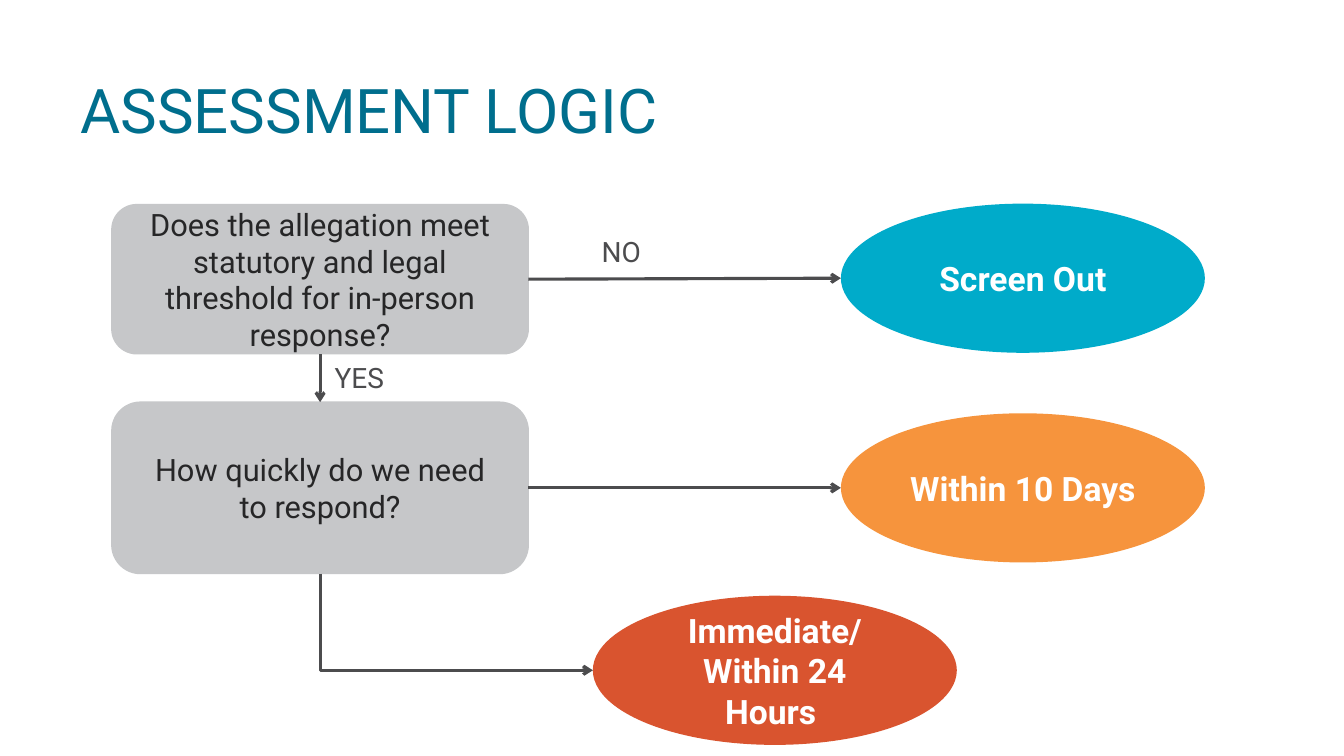
from pptx import Presentation
from pptx.dml.color import RGBColor
from pptx.enum.shapes import MSO_CONNECTOR, MSO_SHAPE
from pptx.enum.text import MSO_ANCHOR, PP_ALIGN
from pptx.oxml.ns import qn
from pptx.util import Inches, Pt
from lxml import etree

STRAIGHT, ELBOW = MSO_CONNECTOR.STRAIGHT, MSO_CONNECTOR.ELBOW
ROUNDED, OVAL = MSO_SHAPE.ROUNDED_RECTANGLE, MSO_SHAPE.OVAL
MIDDLE, TOP = MSO_ANCHOR.MIDDLE, MSO_ANCHOR.TOP
CENTER, LEFT = PP_ALIGN.CENTER, PP_ALIGN.LEFT
BOTTOM_SITE, RIGHT_SITE = 2, 3

TEAL = RGBColor(0x00, 0x6E, 0x8D)
GREY = RGBColor(0xC6, 0xC7, 0xC9)
INK = RGBColor(0x26, 0x26, 0x27)
SLATE = RGBColor(0x4C, 0x4C, 0x4E)
CYAN = RGBColor(0x00, 0xAB, 0xCA)
ORANGE = RGBColor(0xF6, 0x94, 0x3D)
RED = RGBColor(0xD9, 0x54, 0x2F)
WHITE = RGBColor(0xFF, 0xFF, 0xFF)

TITLE = "ASSESSMENT LOGIC"
QUESTION_X, QUESTION_W = 1.11, 4.13
OUTCOME_W, OUTCOME_H = 3.61, 1.48
QUESTIONS = {
    "threshold": (["Does the allegation meet statutory and legal threshold "
                   "for in-person response?"], 2.03, 1.48),
    "urgency": (["How quickly do we need\nto respond?"], 3.99, 1.7),
}
OUTCOMES = {
    "screen out": (["Screen Out"], 8.34, 2.02, CYAN),
    "ten days": (["Within 10 Days"], 8.34, 4.1, ORANGE),
    "immediate": (["Immediate/", "Within 24 Hours "], 5.88, 5.91, RED),
}
ANSWERS = [("NO", 5.87, 2.28, 1.04), ("YES", 3.22, 3.53, 1.31)]
ACROSS = [("threshold", "screen out"), ("urgency", "ten days")]

TITLE_FONT = {"name": "Roboto", "size": Pt(44), "bold": False}
QUESTION_FONT = {"name": "Roboto", "size": Pt(22)}
OUTCOME_FONT = {"name": "Roboto", "size": Pt(24), "bold": True}
ANSWER_FONT = {"name": "Roboto", "size": Pt(20)}


def write(s, lines, font, color, align=CENTER, anchor=MIDDLE):
    tf = s.text_frame
    tf.word_wrap, tf.vertical_anchor = True, anchor
    for i, line in enumerate(lines):
        p = tf.add_paragraph() if i else tf.paragraphs[0]
        p.text, p.alignment = line, align
        for r in p.runs:
            for key, value in font.items():
                setattr(r.font, key, value)
            r.font.color.rgb = color


def add_node(slide, kind, box, fill, lines, font, color):
    s = slide.shapes.add_shape(kind, *map(Inches, box))
    s.shadow.inherit = False
    s.fill.solid()
    s.fill.fore_color.rgb = fill
    s.line.color.rgb = fill
    s.line.width = Pt(1)
    if kind == OVAL:
        s.line.fill.background()
    write(s, lines, font, color)
    return s


def add_arrow(slide, kind, source, site, x, y):
    c = slide.shapes.add_connector(kind, 0, 0, x, y)
    c.begin_connect(source, site)
    c.end_x, c.end_y = x, y
    c.line.color.rgb = SLATE
    c.line.width = Pt(2.25)
    etree.SubElement(c.line._get_or_add_ln(), qn("a:tailEnd"), type="arrow")
    etree.SubElement(c._element.spPr, qn("a:effectLst"))
    return c


def turn_down_then_right(c):
    w, h = c.width, c.height
    left, top = c.left + (w - h) // 2, c.top + (h - w) // 2
    c.left, c.top, c.width, c.height = left, top, h, w
    xfrm = c._element.spPr.find(qn("a:xfrm"))
    xfrm.set("rot", "16200000")
    xfrm.set("flipH", "1")
    c._element.spPr.find(qn("a:prstGeom")).set("prst", "bentConnector2")


def main():
    prs = Presentation()
    prs.slide_width, prs.slide_height = Inches(13.33), Inches(7.5)
    slide = prs.slides.add_slide(prs.slide_layouts[5])

    title = slide.shapes.title
    title.left, title.top, title.width, title.height = map(
        Inches, (0.7, 0.4, 12.05, 1.45))
    write(title, [TITLE], TITLE_FONT, TEAL, LEFT)
    title.text_frame.paragraphs[0].line_spacing = 0.9
    title.text_frame.paragraphs[0].space_before = Pt(10)

    nodes = {}
    for name, (lines, y, h) in QUESTIONS.items():
        nodes[name] = add_node(slide, ROUNDED, (QUESTION_X, y, QUESTION_W, h),
                               GREY, lines, QUESTION_FONT, INK)
    for name, (lines, x, y, fill) in OUTCOMES.items():
        nodes[name] = add_node(slide, OVAL, (x, y, OUTCOME_W, OUTCOME_H),
                               fill, lines, OUTCOME_FONT, WHITE)

    for question, outcome in ACROSS:
        s = nodes[outcome]
        add_arrow(slide, STRAIGHT, nodes[question], RIGHT_SITE,
                  s.left, s.top + s.height // 2)
    urgency, immediate = nodes["urgency"], nodes["immediate"]
    down = add_arrow(slide, STRAIGHT, nodes["threshold"], BOTTOM_SITE,
                     urgency.left + urgency.width // 2, urgency.top)
    down.end_connect(urgency, 0)
    turn_down_then_right(add_arrow(
        slide, ELBOW, urgency, BOTTOM_SITE,
        immediate.left, immediate.top + immediate.height // 2))

    for text, x, y, w in ANSWERS:
        s = slide.shapes.add_textbox(*map(Inches, (x, y, w, 0.44)))
        write(s, [text], ANSWER_FONT, SLATE, LEFT, TOP)

    prs.save("out.pptx")


if __name__ == "__main__":
    main()
